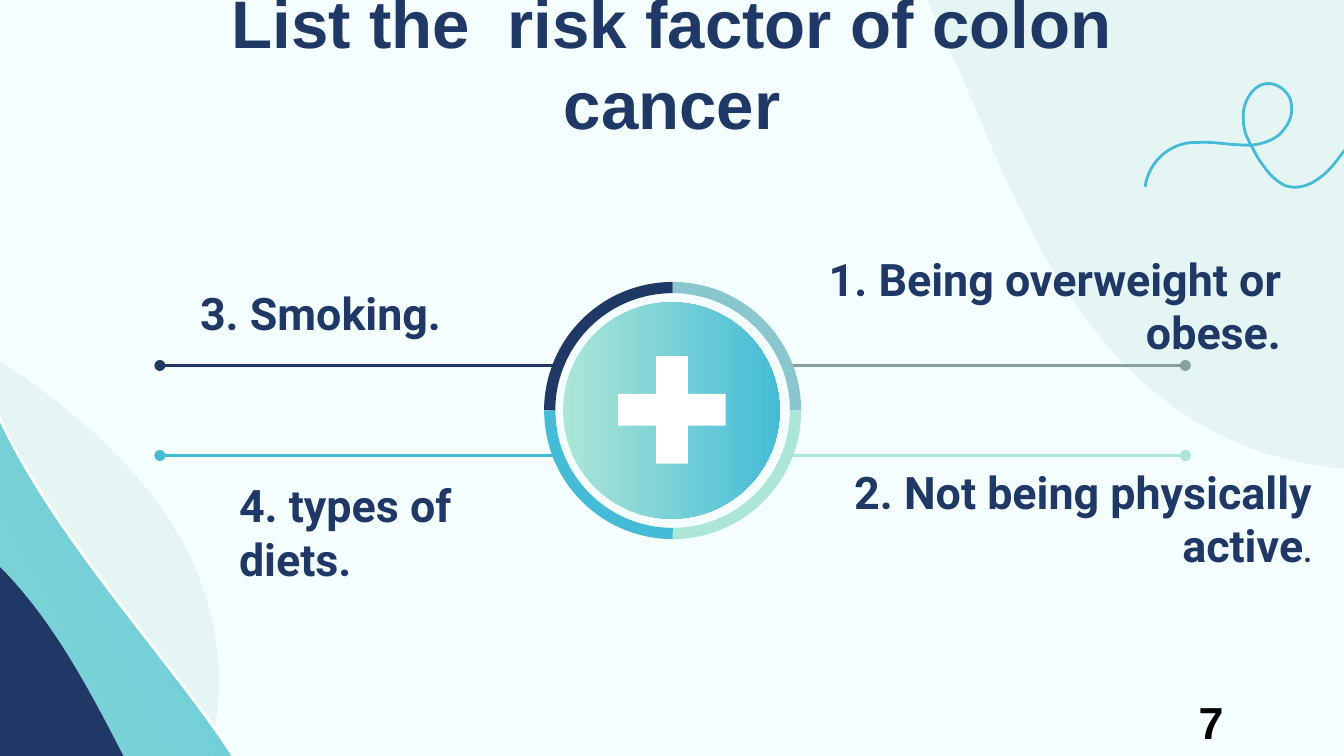
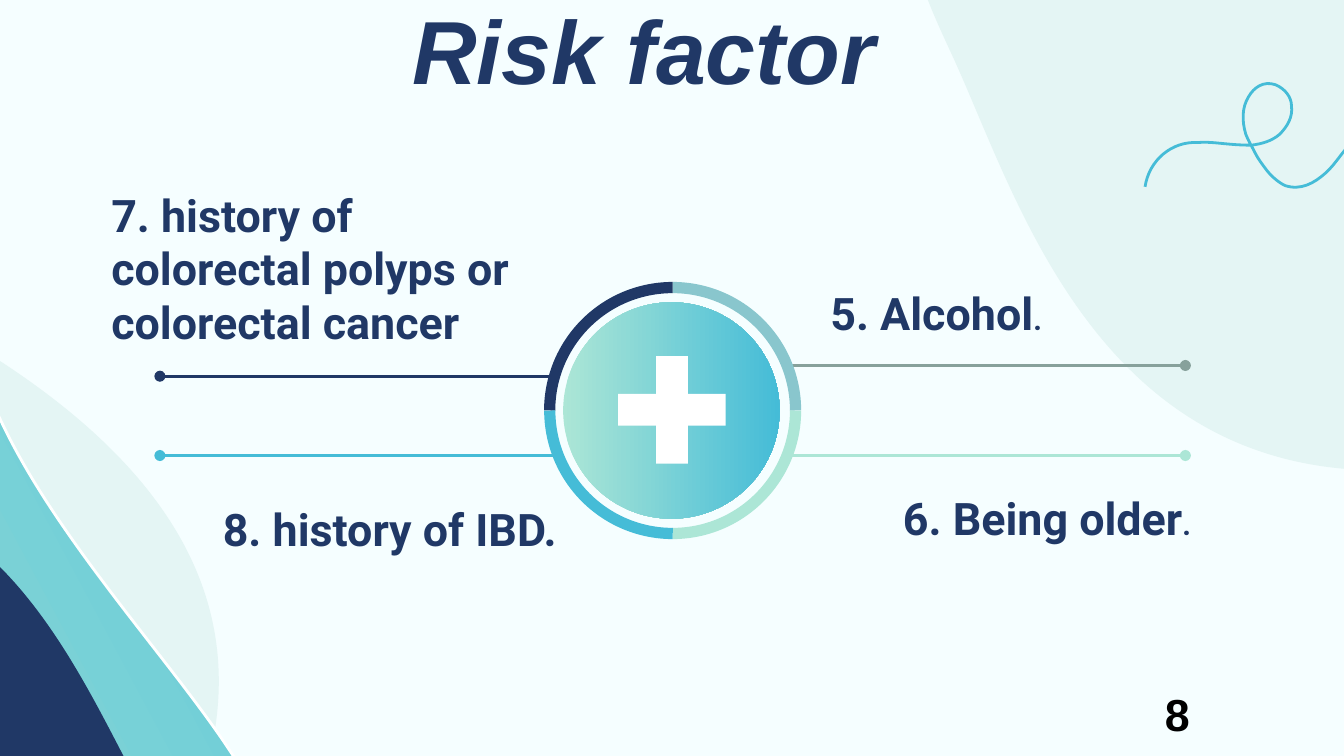
from dataclasses import dataclass
from math import cos, radians, sin

from lxml.etree import SubElement
from pptx import Presentation
from pptx.dml.color import RGBColor
from pptx.enum.shapes import MSO_CONNECTOR, MSO_SHAPE
from pptx.enum.text import MSO_ANCHOR, MSO_AUTO_SIZE, PP_ALIGN
from pptx.oxml.ns import qn
from pptx.util import Cm, Pt


@dataclass(frozen=True)
class Theme:
    paper: str = "F5FEFF"
    mist: str = "E4F5F4"
    navy: str = "203866"
    mint: str = "ACE6D6"
    blue: str = "45BCD7"
    teal: str = "89C6CD"
    sage: str = "87A19B"
    white: str = "FFFFFF"
    black: str = "000000"
    heading_font: str = "Arial"
    body_font: str = "Roboto"
    body_size: int = 24
    stop_size: int = 16
    thin: float = 1.5
    ring: float = 6


THEME = Theme()
LEFT, CENTER, RIGHT = PP_ALIGN.LEFT, PP_ALIGN.CENTER, PP_ALIGN.RIGHT

# All places are in inches. Boxes are left, top, width, height.
# A label holds text, small closing mark, box and alignment.
SLIDES = [
    {
        "title": ("List the  risk factor of colon cancer", (0.94, 0.23, 8.12, 0.47)),
        "title_format": {"size": Pt(36), "bold": True},
        "labels": [
            ("3. Smoking.", "", (1.39, 2, 2.29, 0.65), LEFT),
            ("4. types of diets.", "", (1.68, 3.63, 2.29, 0.65), LEFT),
            ("1. Being overweight or obese.", "", (5.71, 1.81, 3.92, 0.92), RIGHT),
            ("2. Not being physically active", ".", (6.19, 3.53, 3.67, 0.65), RIGHT),
        ],
        "upper_left_line": 2.72,
        "number": ("7", (8.82, 5.12, 1.15, 0.5)),
    },
    {
        "title": ("Risk factor", (0.73, 0.13, 8.12, 0.47)),
        "title_format": {"size": Pt(48), "bold": True, "italic": True},
        "labels": [
            ("7. history of colorectal polyps or colorectal cancer", "",
             (0.73, 1.38, 3.33, 1.23), LEFT),
            ("8. history of IBD.", "", (1.56, 3.61, 3.04, 0.65), LEFT),
            ("5. Alcohol", ".", (6.08, 2, 3.92, 0.65), LEFT),
            ("6. Being older", ".", (6.62, 3.53, 3.67, 0.65), LEFT),
        ],
        "upper_left_line": 2.8,
        "number": ("8", (8.57, 5.06, 0.93, 0.5)),
    },
]

# Outlines in slide coordinates: the start point, then lines (end point)
# and cubic curves (two handles, end point).
MIST_LEAF = [
    (-2.71, 1.73),
    (-2.46, 1.58, -1.93, 1.68, -0.98, 2.14),
    (3.2, 4.16, 1.26, 6.4, 0.61, 7.55),
    (0.23, 8.22, -0.39, 8.94, -0.98, 9.28),
    (-1.39, 9.52, -1.78, 9.57, -2.06, 9.29),
    (-2.76, 8.56, -2.52, 7.86, -2.23, 7.31),
    (-1.38, 5.62, -3.59, 2.24, -2.71, 1.73),
]
TEAL_WAVE = [
    (-0.23, 2.04),
    (-0.17, 1.49, -0.19, 0.84, -0.99, 0.46),
    (-1.76, 0.11, -2.47, 1.59, -2.65, 2.73),
    (-2.82, 3.88, -3.72, 6.34, 0.37, 6.69),
    (4.45, 7.05, -0.46, 4.19, -0.23, 2.04),
]
NAVY_WAVE = [
    (1.62, 8.41),
    (1.56, 8.52, 1.47, 8.6, 1.33, 8.63),
    (0.59, 8.77, 0.2, 8.26, -0.09, 7.79),
    (-1.03, 6.23, -4.6, 6.27, -4.04, 5.16),
    (-3.93, 4.95, -3.67, 4.69, -3.22, 4.38),
    (-0.38, 2.41, 0.49, 4.88, 1.06, 5.89),
    (1.52, 6.72, 1.87, 7.91, 1.62, 8.41),
]
MIST_CORNER = [
    (10.02, 3.49),
    (8.07, 3.33, 7.53, 1.36, 7.07, 0.38),
    (7.01, 0.25, 6.95, 0.12, 6.9, -0.01),
    (10.02, -0.01),
]
SCRIBBLE = [
    (8.52, 1.39),
    (8.55, 1.19, 8.72, 1.05, 8.91, 1.06),
    (9.02, 1.05, 9.13, 1.08, 9.31, 1.08),
    (9.39, 1.07, 9.46, 1.05, 9.52, 1),
    (9.58, 0.94, 9.62, 0.87, 9.61, 0.79),
    (9.61, 0.72, 9.56, 0.66, 9.49, 0.63),
    (9.4, 0.6, 9.33, 0.65, 9.29, 0.72),
    (9.24, 0.8, 9.24, 0.9, 9.27, 1),
    (9.29, 1.05, 9.31, 1.08, 9.34, 1.14),
    (9.36, 1.18, 9.39, 1.22, 9.42, 1.26),
    (9.45, 1.3, 9.5, 1.35, 9.56, 1.38),
    (9.68, 1.42, 9.78, 1.36, 9.86, 1.29),
    (9.94, 1.22, 9.99, 1.12, 10.07, 1.05),
    (10.14, 0.99, 10.24, 0.93, 10.34, 0.97),
    (10.43, 1.01, 10.47, 1.1, 10.49, 1.18),
    (10.51, 1.27, 10.53, 1.37, 10.58, 1.45),
    (10.61, 1.49, 10.64, 1.52, 10.68, 1.53),
    (10.83, 1.58, 10.96, 1.54, 11.04, 1.44),
    (11.1, 1.36, 11.13, 1.27, 11.17, 1.18),
    (11.22, 1.09, 11.3, 1.03, 11.39, 1),
    (11.54, 0.97, 11.67, 1.04, 11.74, 1.17),
]

# Outline, frame before turning, turn in degrees, look.
DECORATION = [
    (MIST_LEAF, (-4.36, 1.13, 7.36, 7.4), 329.8, {"fill": THEME.mist}),
    (TEAL_WAVE, (-2.64, 0.58, 6.51, 8.73), 117.9,
     {"fill": (THEME.mint, THEME.blue), "angle": 146, "line": THEME.white}),
    (NAVY_WAVE, (-3.16, 2.1, 5.35, 6.51), 116.9, {"fill": THEME.navy}),
    (MIST_CORNER, (6.9, -0.01, 3.12, 3.5), 180, {"fill": THEME.mist}),
    (SCRIBBLE, (8.67, 0.44, 2.91, 1.6), 204.2, {"line": THEME.blue}),
]

RING_BOX = (4.09, 2.14, 1.83, 1.83)
# Colour, turn and mirroring of each quarter.
RING_QUARTERS = [
    (THEME.teal, 0, False), (THEME.navy, 0, True),
    (THEME.mint, 180, True), (THEME.blue, 180, False),
]
DISC_BOX = (4.19, 2.25, 1.61, 1.61)
CROSS_BOX = (4.6, 2.65, 0.8, 0.8)
UPPER_LINE, LOWER_LINE = 2.72, 3.39


def inches(*values):
    return [Cm(value * 2.54) for value in values]


def rgb(color):
    return RGBColor.from_string(color)


def paint(shape, fill=None, line=None, width=THEME.thin, angle=0):
    """Fill with a colour, a pair of gradient colours or nothing."""
    shape.shadow.inherit = False
    if isinstance(fill, tuple):
        shape.fill.gradient()
        shape.fill.gradient_angle = angle
        for stop, color in zip(shape.fill.gradient_stops, fill):
            stop.color.rgb = rgb(color)
    elif fill:
        shape.fill.solid()
        shape.fill.fore_color.rgb = rgb(fill)
    else:
        shape.fill.background()
    if line:
        shape.line.color.rgb = rgb(line)
        shape.line.width = Pt(width)
    else:
        shape.line.fill.background()


def into_frame(x, y, box, turn):
    """Turn a slide point back into the unturned frame, from its corner."""
    left, top, width, height = box
    dx, dy = x - left - width / 2, y - top - height / 2
    c, s = cos(radians(turn)), sin(radians(turn))
    return inches(dx * c + dy * s + width / 2, dy * c - dx * s + height / 2)


def add_outline(slide, outline, box, turn, look):
    left, top, width, height = inches(*box)
    builder = slide.shapes.build_freeform(left, top)
    builder.add_line_segments([(left + width, top + height)], close=False)
    shape = builder.convert_to_shape()
    shape.rotation = turn
    curve = shape._element.spPr.find(".//" + qn("a:path"))
    for child in list(curve):
        curve.remove(child)
    curve.set("w", str(width))
    curve.set("h", str(height))
    for index, numbers in enumerate(outline):
        kind = "cubicBezTo" if len(numbers) == 6 else "lnTo" if index else "moveTo"
        step = SubElement(curve, qn("a:" + kind))
        for x, y in zip(numbers[::2], numbers[1::2]):
            px, py = into_frame(x, y, box, turn)
            SubElement(step, qn("a:pt"), x=str(px), y=str(py))
    if "fill" in look:
        SubElement(curve, qn("a:close"))
    paint(shape, **look)


def add_branch(slide, outer, inner, y, color):
    """Line from a dot at the outer end to the ring."""
    branch = slide.shapes.add_connector(
        MSO_CONNECTOR.STRAIGHT, *inches(outer, y, inner, y))
    branch.line.color.rgb = rgb(color)
    branch.line.width = Pt(THEME.thin)
    properties = branch._element.spPr
    SubElement(properties.find(qn("a:ln")), qn("a:headEnd"), type="oval")
    SubElement(properties, qn("a:effectLst"))


def add_emblem(slide):
    for color, turn, mirrored in RING_QUARTERS:
        quarter = slide.shapes.add_shape(MSO_SHAPE.ARC, *inches(*RING_BOX))
        quarter.rotation = turn
        if mirrored:
            quarter._element.spPr.find(qn("a:xfrm")).set("flipH", "1")
        paint(quarter, line=color, width=THEME.ring)
    disc = slide.shapes.add_shape(MSO_SHAPE.OVAL, *inches(*DISC_BOX))
    paint(disc, fill=(THEME.mint, THEME.blue))
    cross = slide.shapes.add_shape(MSO_SHAPE.CROSS, *inches(*CROSS_BOX))
    cross.adjustments[0] = 0.352
    paint(cross, fill=THEME.white)


def add_text(slide, runs, box, align, color, frame_format):
    """Write runs, each a text with its font values, into a box."""
    frame = slide.shapes.add_textbox(*inches(*box)).text_frame
    for name, value in {"word_wrap": True, **frame_format}.items():
        setattr(frame, name, value)
    paragraph = frame.paragraphs[0]
    paragraph.alignment = align
    for text, font_format in runs:
        run = paragraph.add_run()
        run.text = text
        run.font.color.rgb = rgb(color)
        for name, value in font_format.items():
            setattr(run.font, name, value)


INSET = Cm(0.25)
CENTERED_FRAME = {
    "vertical_anchor": MSO_ANCHOR.MIDDLE, "margin_left": INSET,
    "margin_right": INSET, "margin_top": INSET, "margin_bottom": INSET,
}
NUMBER_FRAME = {"auto_size": MSO_AUTO_SIZE.SHAPE_TO_FIT_TEXT}
LABEL_FONT = {"name": THEME.body_font, "size": Pt(THEME.body_size), "bold": True}
STOP_FONT = {**LABEL_FONT, "size": Pt(THEME.stop_size)}
NUMBER_FONT = {**LABEL_FONT, "name": THEME.heading_font}


def build_slide(slide, content):
    for outline, box, turn, look in DECORATION:
        add_outline(slide, outline, box, turn, look)
    add_branch(slide, 8.82, 5.87, UPPER_LINE, THEME.sage)
    add_branch(slide, 8.82, 5.88, LOWER_LINE, THEME.mint)
    add_branch(slide, 1.19, 4.15, content["upper_left_line"], THEME.navy)
    add_branch(slide, 1.19, 4.13, LOWER_LINE, THEME.blue)
    add_emblem(slide)
    for text, stop, box, align in content["labels"]:
        runs = [(text, LABEL_FONT)] + ([(stop, STOP_FONT)] if stop else [])
        add_text(slide, runs, box, align, THEME.navy, CENTERED_FRAME)
    title, box = content["title"]
    title_font = {"name": THEME.heading_font, **content["title_format"]}
    add_text(slide, [(title, title_font)], box, CENTER, THEME.navy, CENTERED_FRAME)
    number, box = content["number"]
    add_text(slide, [(number, NUMBER_FONT)], box, LEFT, THEME.black, NUMBER_FRAME)


def main():
    deck = Presentation()
    deck.slide_width, deck.slide_height = Cm(25.4), Cm(14.29)
    background = deck.slide_master.background.fill
    background.solid()
    background.fore_color.rgb = rgb(THEME.paper)
    for content in SLIDES:
        build_slide(deck.slides.add_slide(deck.slide_layouts[6]), content)
    deck.save("out.pptx")


if __name__ == "__main__":
    main()
